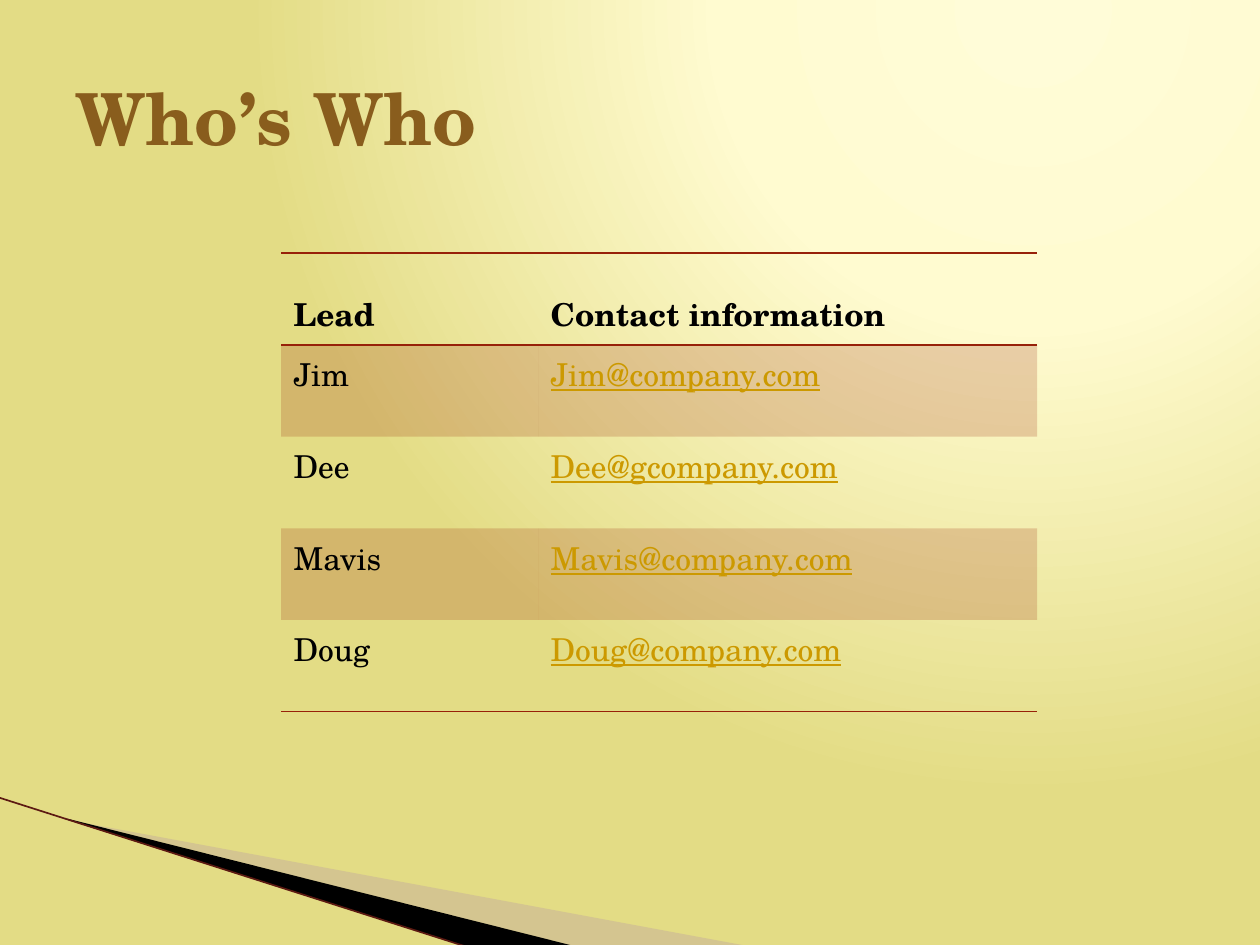
from lxml.etree import SubElement
from pptx import Presentation
from pptx.dml.color import RGBColor
from pptx.enum.text import MSO_ANCHOR as Anchor
from pptx.oxml import parse_xml
from pptx.oxml.ns import nsdecls, qn
from pptx.util import Pt

FONT = "TeX Gyre Schola"
RED = "972109"
BLACK = "000000"
NO_GRID_STYLE = "{2D5ABB26-0587-4C30-8999-92F81FD0307C}"
CONTACTS = [
    ("Lead", "Contact information"),
    ("Jim", "Jim@company.com"),
    ("Dee", "Dee@gcompany.com"),
    ("Mavis", "Mavis@company.com"),
    ("Doug", "Doug@company.com"),
]


def color(value):
    return RGBColor.from_string(value)


def fill_solid(fill, value, opacity=100):
    fill.solid()
    fill.fore_color.rgb = color(value)
    if opacity < 100:
        clr = fill._xPr.find(".//" + qn("a:srgbClr"))
        SubElement(clr, qn("a:alpha"), val=str(opacity * 1000))


def style_text(frame, size, value, bold=False, underline=False):
    for para in frame.paragraphs:
        for span in para.runs:
            font = span.font
            font.name, font.size = FONT, Pt(size)
            font.bold, font.underline = bold, underline
            font.color.rgb = color(value)


def paint_background(page):
    """Radial glow from the upper right corner."""
    stops = "".join(
        f'<a:gs pos="{percent * 1000}"><a:srgbClr val="{value}"/></a:gs>'
        for percent, value in [(0, "FFFCD8"), (40, "FFFBD0"), (100, "E3DC85")]
    )
    page.element.cSld.insert(0, parse_xml(
        f'<p:bg {nsdecls("p", "a")}><p:bgPr><a:gradFill rotWithShape="1">'
        f'<a:gsLst>{stops}</a:gsLst><a:path path="circle">'
        '<a:fillToRect l="65000" t="0" r="0" b="98000"/></a:path>'
        '</a:gradFill><a:effectLst/></p:bgPr></p:bg>'
    ))


def add_blade(page, points, value, opacity=100):
    start, *rest = [(Pt(x), Pt(y)) for x, y in points]
    builder = page.shapes.build_freeform(*start, scale=1.0)
    builder.add_line_segments(rest, close=True)
    blade = builder.convert_to_shape()
    blade.shadow.inherit = False
    fill_solid(blade.fill, value, opacity)
    blade.line.fill.background()


def add_corner(page, left, top, width, height):
    """Sweeping blades and edge line in the lower left corner."""
    bottom = top + height
    tip_x, tip_y = left + 39, top + 12
    add_blade(page, [(tip_x, tip_y + 0.7), (left + width, bottom),
                     (left + 329, bottom), (tip_x, tip_y)], "BFA4A1", 40)
    add_blade(page, [(tip_x, tip_y), (left + 329.5, bottom),
                     (left + 268.5, bottom + 0.5), (tip_x, tip_y + 0.7)], BLACK)
    edge = page.shapes.add_connector(
        1, Pt(left), Pt(top), Pt(left + 268), Pt(bottom + 0.5))
    edge.line.color.rgb = color("5C1A12")
    edge.line.width = Pt(0.95)
    SubElement(edge._element.spPr, qn("a:effectLst"))


def add_title(page, left, top, width, height):
    box = page.shapes.add_textbox(Pt(left), Pt(top), Pt(width), Pt(height))
    frame = box.text_frame
    frame.word_wrap = True
    frame.vertical_anchor = Anchor.MIDDLE
    frame.text = "Who’s Who"
    style_text(frame, 41, "895D1D", bold=True)


def add_border(cell, side):
    props = cell._tc.get_or_add_tcPr()
    line = SubElement(props, qn(f"a:ln{side}"), w=str(Pt(1)))
    SubElement(SubElement(line, qn("a:solidFill")), qn("a:srgbClr"), val=RED)


def add_contacts(page, left, top, width, height):
    rows = len(CONTACTS)
    frame = page.shapes.add_table(
        rows, 2, Pt(left), Pt(top), Pt(width), Pt(height))
    table = frame.table
    table.first_row = table.horz_banding = False
    frame._element.find(".//" + qn("a:tableStyleId")).text = NO_GRID_STYLE
    for column, share in zip(table.columns, (0.34, 0.66)):
        column.width = Pt(width * share)
    for r, texts in enumerate(CONTACTS):
        header = r == 0
        for c, text in enumerate(texts):
            cell = table.cell(r, c)
            cell.text = text
            cell.vertical_anchor = Anchor.BOTTOM if header else Anchor.TOP
            link = c == 1 and not header
            style_text(cell.text_frame, 18, "CC9900" if link else BLACK,
                       bold=header, underline=link)
            if header:
                add_border(cell, "T")
            if header or r == rows - 1:
                add_border(cell, "B")
            if r % 2:
                fill_solid(cell.fill, RED, 20)
            else:
                cell.fill.background()


def main():
    deck = Presentation()
    deck.slide_width, deck.slide_height = Pt(720), Pt(540)
    page = deck.slides.add_slide(deck.slide_layouts[6])
    paint_background(page)
    add_corner(page, -0.5, 455.8, 429, 85)
    add_contacts(page, 160.6, 144.7, 432, 262)
    add_title(page, 36, 21.6, 648, 90)
    deck.save("out.pptx")


if __name__ == "__main__":
    main()
